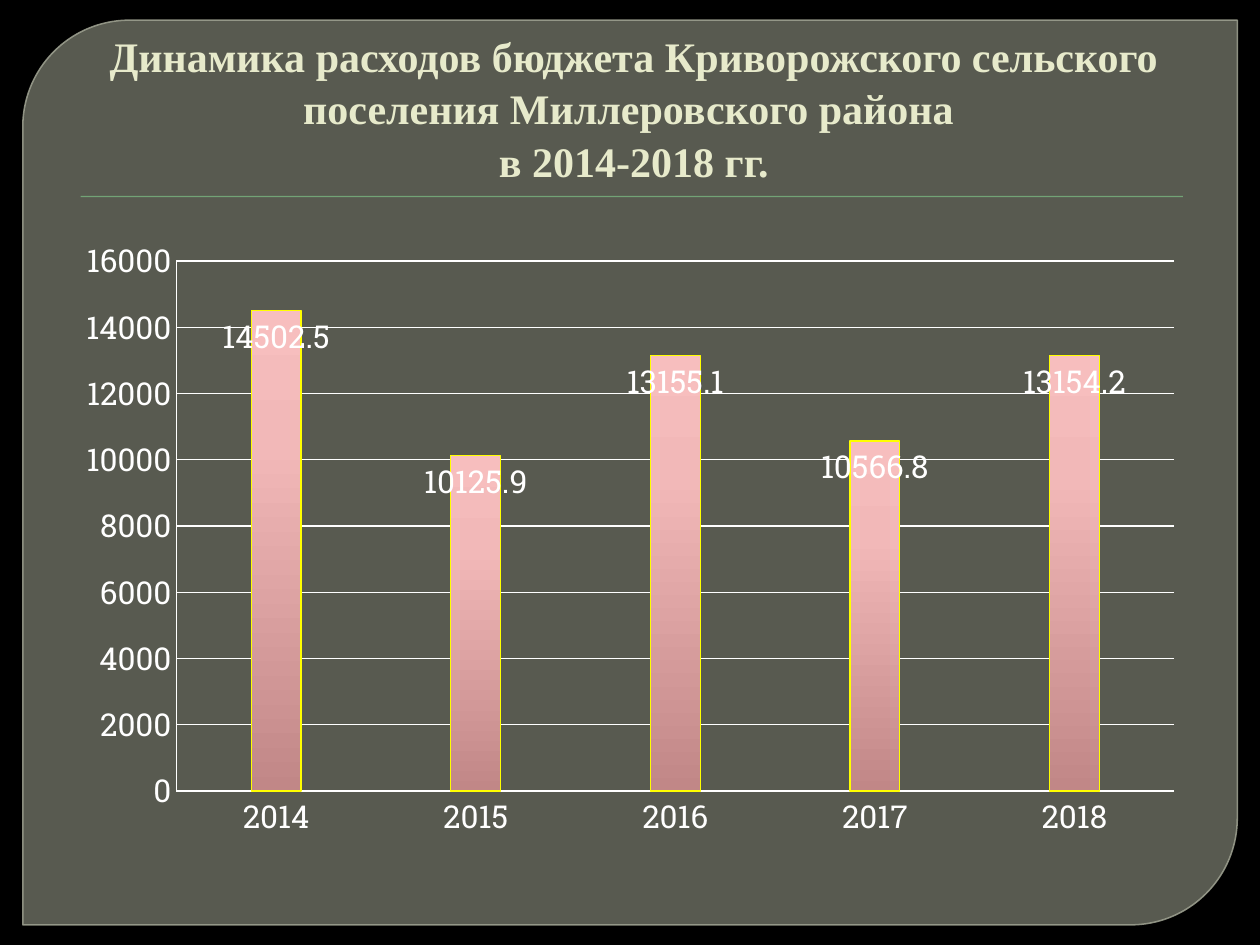
import pptx
import pptx.chart.data
import pptx.dml.color
import pptx.enum.chart
import pptx.enum.shapes
import pptx.enum.text
import pptx.oxml
import pptx.oxml.ns
import pptx.util
from lxml import etree

Pt = pptx.util.Pt
NAMESPACES = pptx.oxml.ns.nsdecls("a", "c")

# Content
TITLE = ("Динамика расходов бюджета Криворожского сельского поселения "
         "Миллеровского района \vв 2014-2018 гг.")
EXPENSES = {"2014": 14502.5, "2015": 10125.9, "2016": 13155.1,
            "2017": 10566.8, "2018": 13154.2}

# Boxes in points: left, top, width, height
PANEL_BOX = (13, 11.5, 694, 517)
RULE_BOX = (46, 112, 630, 0.75)
TITLE_BOX = (36, 20, 648, 90)
CHART_BOX = (36, 129.6, 648, 356.4)
PLOT_PARTS = {"x": 0.1, "y": 0.055, "w": 0.88, "h": 0.85}

THEME = {
    "background": "000000", "panel": "888B7B", "panel_line": "9DA090",
    "rule": "72A376", "title": "E7EACB", "chart_text": "FFFFFF",
    "bar_line": "FFFF00",
    "bar_stops": [(0, "C18787"), (72, "F2B8B8"), (100, "F7BEBE")],
    "title_font": "Times New Roman", "chart_font": "Roboto Slab",
    "title_size": 24, "chart_size": 18,
}


def rgb(name):
    return pptx.dml.color.RGBColor.from_string(THEME[name])


def points(box):
    return [Pt(value) for value in box]


def format_font(font, *, name, size, color, bold=False):
    font.name = THEME[name]
    font.size = Pt(THEME[size])
    font.bold = bold
    font.color.rgb = rgb(color)


def write_text(shape, text, *, align, anchor, indent=0, spacing=1.0, **font):
    frame = shape.text_frame
    frame.word_wrap = True
    frame.auto_size = pptx.enum.text.MSO_AUTO_SIZE.NONE
    frame.vertical_anchor = anchor
    frame.text = text
    for paragraph in frame.paragraphs:
        paragraph.alignment = align
        paragraph.line_spacing = spacing
        paragraph._p.get_or_add_pPr().set("marL", str(Pt(indent)))
        for run in paragraph.runs:
            format_font(run.font, **font)


def set_opacity(fill_parent, percent):
    color = fill_parent.find(pptx.oxml.ns.qn("a:solidFill"))[0]
    etree.SubElement(color, pptx.oxml.ns.qn("a:alpha"), val=str(percent * 1000))


def add_block(slide, kind, box, fill):
    shape = slide.shapes.add_shape(kind, *points(box))
    shape.shadow.inherit = False
    shape.fill.solid()
    shape.fill.fore_color.rgb = rgb(fill)
    shape.line.fill.background()
    return shape


def style_axis(axis):
    axis.major_tick_mark = pptx.enum.chart.XL_TICK_MARK.NONE
    axis.minor_tick_mark = pptx.enum.chart.XL_TICK_MARK.NONE
    axis.format.line.color.rgb = rgb("chart_text")
    axis.format.line.width = Pt(0.75)


def add_expense_chart(slide):
    data = pptx.chart.data.CategoryChartData()
    data.categories = list(EXPENSES)
    data.add_series("Series 1", list(EXPENSES.values()))
    chart = slide.shapes.add_chart(
        pptx.enum.chart.XL_CHART_TYPE.COLUMN_STACKED, *points(CHART_BOX), data).chart
    chart.has_legend = False
    chart.has_title = False
    text_format = {"name": "chart_font", "size": "chart_size", "color": "chart_text"}
    format_font(chart.font, **text_format)

    # Axes
    style_axis(chart.category_axis)
    style_axis(chart.value_axis)
    chart.value_axis.minimum_scale = 0
    chart.value_axis.maximum_scale = 16000
    chart.value_axis.major_unit = 2000
    chart.value_axis.has_major_gridlines = True
    grid_line = chart.value_axis.major_gridlines.format.line
    grid_line.color.rgb = rgb("chart_text")
    grid_line.width = Pt(0.75)

    # Bars and their values
    plot = chart.plots[0]
    plot.gap_width = 300
    plot.overlap = 100
    plot.vary_by_categories = False
    series = plot.series[0]
    series.format.line.color.rgb = rgb("bar_line")
    series.format.line.width = Pt(0.75)
    stops = "".join(f'<a:gs pos="{position * 1000}"><a:srgbClr val="{color}"/></a:gs>'
                    for position, color in THEME["bar_stops"])
    series.format.line._ln.addprevious(pptx.oxml.parse_xml(
        f'<a:gradFill {NAMESPACES} rotWithShape="1"><a:gsLst>{stops}</a:gsLst>'
        '<a:lin ang="16200000" scaled="0"/></a:gradFill>'))
    labels = series.data_labels
    labels.show_value = True
    labels.position = pptx.enum.chart.XL_LABEL_POSITION.INSIDE_END
    format_font(labels.font, **text_format)

    # Plot area position
    plot_area = chart._chartSpace.chart.plotArea
    for layout in plot_area.findall(pptx.oxml.ns.qn("c:layout")):
        plot_area.remove(layout)
    parts = "".join(f'<c:{key} val="{value}"/>' for key, value in PLOT_PARTS.items())
    plot_area.insert(0, pptx.oxml.parse_xml(
        f'<c:layout {NAMESPACES}><c:manualLayout><c:layoutTarget val="inner"/>'
        f'<c:xMode val="edge"/><c:yMode val="edge"/>{parts}</c:manualLayout></c:layout>'))


def main():
    presentation = pptx.Presentation()
    presentation.slide_width, presentation.slide_height = Pt(720), Pt(540)
    slide = presentation.slides.add_slide(presentation.slide_layouts[5])
    slide.background.fill.solid()
    slide.background.fill.fore_color.rgb = rgb("background")
    kinds = pptx.enum.shapes.MSO_SHAPE

    # Panel and rule, behind the title
    panel = add_block(slide, kinds.ROUND_2_DIAG_RECTANGLE, PANEL_BOX, "panel")
    panel.adjustments[0], panel.adjustments[1] = 0.118, 0
    panel.line.color.rgb = rgb("panel_line")
    panel.line.width = Pt(0.87)
    set_opacity(panel._element.spPr, 65)
    set_opacity(panel.line._ln, 88)
    add_block(slide, kinds.RECTANGLE, RULE_BOX, "rule")

    # Title
    title = slide.shapes.title
    title.left, title.top, title.width, title.height = points(TITLE_BOX)
    write_text(title, TITLE, align=pptx.enum.text.PP_ALIGN.CENTER,
               anchor=pptx.enum.text.MSO_ANCHOR.BOTTOM, indent=4.32, spacing=1.05,
               name="title_font", size="title_size", color="title", bold=True)
    slide.shapes._spTree.append(title._element)

    add_expense_chart(slide)
    presentation.save("out.pptx")


if __name__ == "__main__":
    main()
